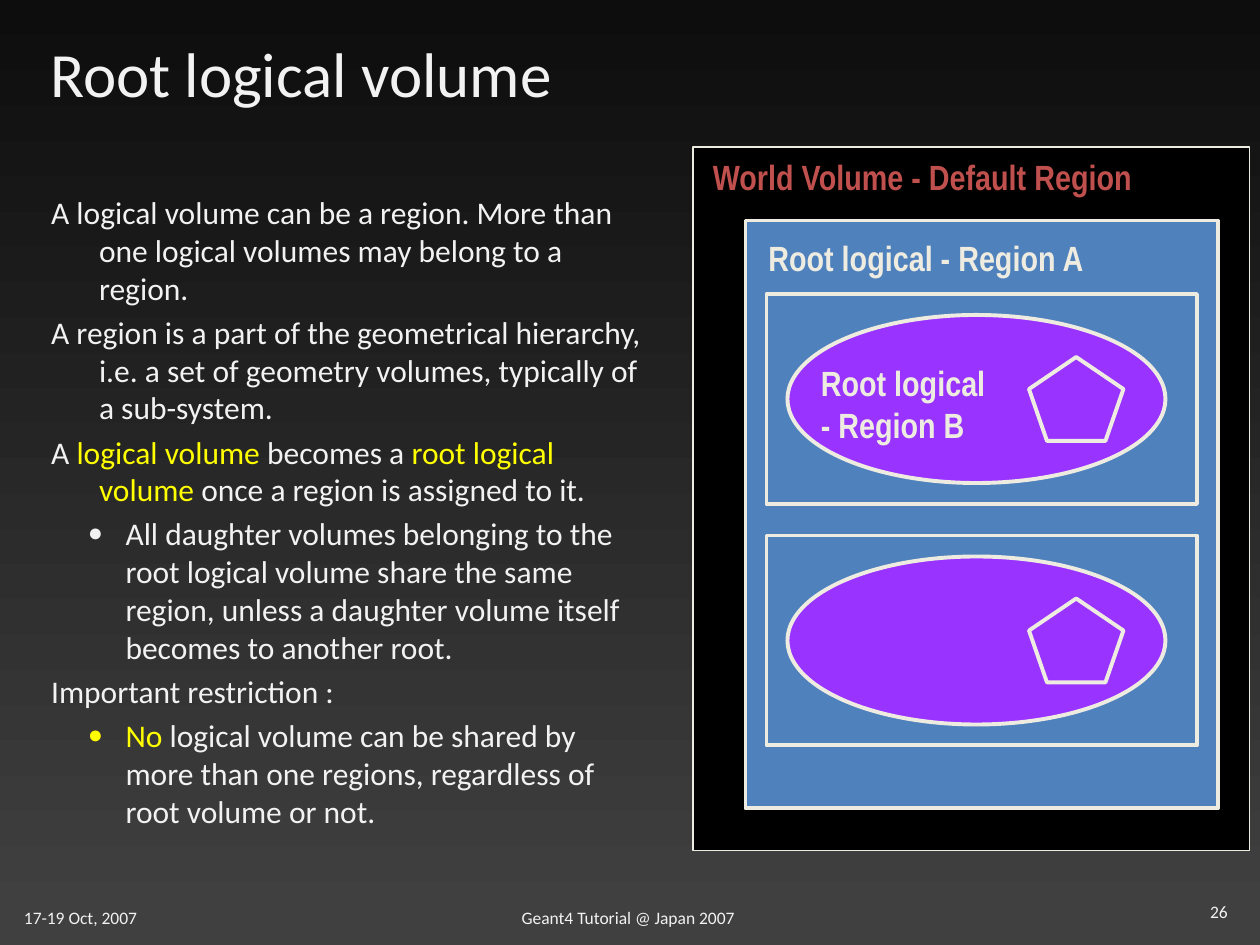
from pptx import Presentation, util as u
from pptx.dml.color import RGBColor
from pptx.enum import shapes as sh, text as tx
from lxml import etree

COLS, ROWS = 120, 90
HUES = {"pale": "F2F2F2", "cream": "EEECE1", "gold": "FFFF00", "red": "C0504D",
        "blue": "4F81BD", "plum": "9933FF", "black": "000000",
        "dusk": "404040", "night": "0D0D0D"}
KIND = sh.MSO_SHAPE
ALIGN = tx.PP_ALIGN

POINTS = [
    (0, ["A logical volume can be a region. More than one logical volumes "
         "may belong to a region."]),
    (0, ["A region is a part of the geometrical hierarchy, i.e. a set of "
         "geometry volumes, typically of a sub-system."]),
    (0, ["A ", "logical volume", " becomes a ", "root logical volume",
         " once a region is assigned to it."]),
    (1, ["All daughter volumes belonging to the root logical volume share the "
         "same region, unless a daughter volume itself becomes to another root."]),
    (0, ["Important restriction :"]),
    (1, ["", "No", " logical volume can be shared by more than one regions, "
         "regardless of root volume or not."]),
]

prs = Presentation()
prs.slide_width, prs.slide_height = u.Inches(10), u.Inches(7.5)
slide = prs.slides.add_slide(prs.slide_layouts[6])


def hue(name):
    return RGBColor.from_string(HUES[name])


def place(box):
    x, y, w, h = box
    wide, high = prs.slide_width / COLS, prs.slide_height / ROWS
    return int(x * wide), int(y * high), int(w * wide), int(h * high)


def inner(box, x, y, w, h):
    return box[0] + x, box[1] + y, w, h


def style(font, size, color, face="Calibri", bold=False):
    font.size, font.name, font.bold = u.Pt(size), face, bold
    font.color.rgb = hue(color)


def frame(box, wrap=True):
    area = slide.shapes.add_textbox(*place(box)).text_frame
    area.word_wrap = wrap
    return area


def label(box, words, size, color="pale", align=ALIGN.LEFT, wrap=True, **look):
    area = frame(box, wrap)
    area.text = words
    para = area.paragraphs[0]
    para.alignment = align
    style(para.runs[0].font, size, color, **look)
    return area


def tag(box, words, color="cream", **look):
    return label(box, words, 20, color, face="Arial Narrow", bold=True, **look)


def solid(kind, box, color, line=2.25):
    form = slide.shapes.add_shape(kind, *place(box))
    form.shadow.inherit = False
    form.fill.solid()
    form.fill.fore_color.rgb = hue(color)
    form.line.color.rgb = hue("cream")
    form.line.width = u.Pt(line)


def backdrop():
    fill = slide.background.fill
    fill.gradient()
    fill.gradient_angle = 90
    for stop, (spot, name) in zip(fill.gradient_stops,
                                  [(0.03, "dusk"), (1, "night")]):
        stop.position = spot
        stop.color.rgb = hue(name)


def bullet(props, color):
    ns = "{http://schemas.openxmlformats.org/drawingml/2006/main}"
    tint = etree.SubElement(props, ns + "buClr")
    etree.SubElement(tint, ns + "srgbClr", val=HUES[color])
    etree.SubElement(props, ns + "buSzPct", val="80000")
    etree.SubElement(props, ns + "buFont", typeface="Arial")
    etree.SubElement(props, ns + "buChar", char="●")


def points(box):
    area = frame(box)
    for i, (level, parts) in enumerate(POINTS):
        para = area.add_paragraph() if i else area.paragraphs[0]
        para.level = level
        left, hang = (0.59, 0.3) if level else (0.38, 0.38)
        props = para._p.get_or_add_pPr()
        props.set("marL", str(u.Inches(left)))
        props.set("indent", str(-u.Inches(hang)))
        if i:
            para.space_before = u.Pt(3.6)
        if level:
            bullet(props, "pale" if parts[0] else "gold")
        for j, part in enumerate(parts):
            if part:
                run = para.add_run()
                run.text = part
                style(run.font, 18, "gold" if j % 2 else "pale")


def part(box, name=None):
    solid(KIND.RECTANGLE, box, "blue")
    solid(KIND.OVAL, inner(box, 2, 2, 36, 16), "plum")
    if name:
        tag(inner(box, 4, 5.8, 19, 9.2), name)
    solid(KIND.REGULAR_PENTAGON, inner(box, 25, 6, 9, 8), "plum")


def world(box):
    solid(KIND.RECTANGLE, box, "black", 0.75)
    head = tag(inner(box, 0.6, 1, 42.5, 4.4), "World Volume - Default Region",
               "red", align=ALIGN.CENTER, wrap=False)
    head.paragraphs[0].line_spacing = 0.8
    root = inner(box, 5, 7, 45, 56)
    solid(KIND.RECTANGLE, root, "blue")
    tag(inner(root, 1, 0.9, 42, 5.2), "Root logical - Region A")
    for i, name in enumerate(["Root logical - Region B", None]):
        part(inner(root, 2, 7 + 23 * i, 41, 20), name)


def footer(box):
    label(inner(box, 0, 0.6, 13.4, 3.2), "17-19 Oct, 2007", 10, wrap=False)
    label(inner(box, 47.4, 0.6, 23.2, 3.2), "Geant4 Tutorial @ Japan 2007", 10,
          wrap=False)
    label(inner(box, 89, 0, 28, 4.8), "26", 10, align=ALIGN.RIGHT)


backdrop()
title = label((3.6, 2.6, 108, 8.6), "Root logical volume", 36)
title.vertical_anchor = tx.MSO_ANCHOR.MIDDLE
points((3.7, 17.8, 59, 66.6))
world((66, 14, 53, 67))
footer((1.1, 85.2, 118, 4.8))
prs.save("out.pptx")
